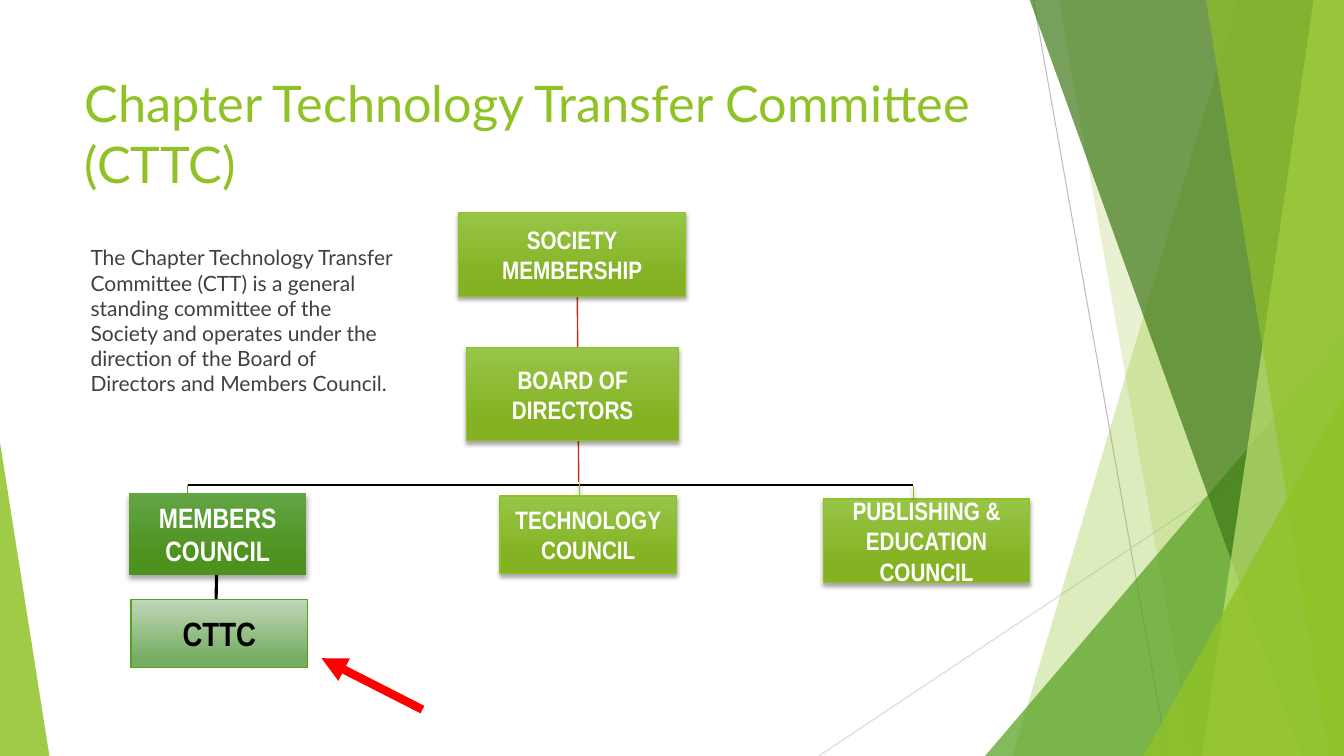
from lxml import etree
from pptx import Presentation
from pptx import util as u
from pptx.dml import color as dc
from pptx.enum import shapes as es, text as et
from pptx.oxml import ns

PX = 9144
WIDE, HIGH = 1333, 750
GREEN, LEAF = "90C226", "54A021"
LIME = ("97C547", "84B223", 0.78)
MOSS = ("63A545", "4D921E", 0.78)
PALE = ("C0D6B9", "76AD61", 0.88)


def px(*vals):
    return [u.Emu(v * PX) for v in vals]


def rgb(code):
    return dc.RGBColor.from_string(code)


def add(node, tag, **attrs):
    return etree.SubElement(node, ns.qn(tag), {k: str(v) for k, v in attrs.items()})


def shade(item, blur, dist):
    props = item._element.spPr
    effect = props.find(ns.qn("a:effectLst"))
    if effect is None:
        effect = add(props, "a:effectLst")
    if blur:
        cast = add(effect, "a:outerShdw", blurRad=u.Pt(blur), dist=u.Pt(dist),
                   dir=5400000, algn="ctr", rotWithShape=0)
        add(add(cast, "a:srgbClr", val="000000"), "a:alpha", val=35000)


def wire(slide, start, end, color, width, blur=0, arrow=False):
    line = slide.shapes.add_connector(es.MSO_CONNECTOR.STRAIGHT, *px(*start, *end))
    line.line.color.rgb = rgb(color)
    line.line.width = u.Pt(width)
    if arrow:
        add(line.line._get_or_add_ln(), "a:tailEnd", type="triangle")
    shade(line, blur, 2)


def tint(shape, color, alpha):
    shape.shadow.inherit = False
    shape.fill.solid()
    shape.fill.fore_color.rgb = rgb(color)
    shape.line.fill.background()
    tone = shape._element.spPr.find(ns.qn("a:solidFill"))[0]
    add(tone, "a:alpha", val=alpha * 1000)


def facet(slide, top, base, color, alpha):
    form = slide.shapes.build_freeform(top, -1, scale=PX)
    form.add_line_segments([(WIDE, -1), (WIDE, HIGH), (base, HIGH)])
    tint(form.convert_to_shape(), color, alpha)


def wedge(slide, place, peak, color, alpha):
    shape = slide.shapes.add_shape(es.MSO_SHAPE.ISOSCELES_TRIANGLE, *px(*place))
    shape.adjustments[0] = peak
    tint(shape, color, alpha)


def style(para, font, size, color, bold=False):
    for run in para.runs:
        run.font.name = font
        run.font.size = u.Pt(size)
        run.font.bold = bold
        run.font.color.rgb = rgb(color)


def box(slide, place, words, size=18, grad=LIME, edge=GREEN,
        ink="FFFFFF", blur=3, dist=2, lead=0):
    shape = slide.shapes.add_shape(es.MSO_SHAPE.RECTANGLE, *px(*place))
    shape.shadow.inherit = False
    shape.fill.gradient()
    shape.fill.gradient_angle = 270
    first, last = shape.fill.gradient_stops
    first.color.rgb, last.color.rgb = rgb(grad[0]), rgb(grad[1])
    first.position, last.position = 0, grad[2]
    if edge:
        shape.line.color.rgb = rgb(edge)
        shape.line.width = u.Pt(1)
    else:
        shape.line.fill.background()
    shade(shape, blur, dist)
    frame = shape.text_frame
    frame.word_wrap = True
    frame.vertical_anchor = et.MSO_ANCHOR.MIDDLE
    frame.margin_left, frame.margin_top, frame.margin_right, frame.margin_bottom = px(1, 1, 1, 1)
    frame.text = words
    frame.paragraphs[0].space_before = u.Pt(lead)
    for para in frame.paragraphs:
        para.alignment = et.PP_ALIGN.CENTER
        style(para, "Arial Narrow", size, ink, True)


def prose(shape, place, words, size, color):
    shape.left, shape.top, shape.width, shape.height = px(*place)
    frame = shape.text_frame
    frame.word_wrap = True
    frame.auto_size = et.MSO_AUTO_SIZE.NONE
    frame.vertical_anchor = et.MSO_ANCHOR.TOP
    frame.text = words
    frame.paragraphs[0].alignment = et.PP_ALIGN.LEFT
    style(frame.paragraphs[0], "Lato", size, color)


def decor(slide):
    wire(slide, (1025, 0), (1158, HIGH), "BFBFBF", 0.75)
    wire(slide, (WIDE, 403), (812, HIGH), "D9D9D9", 0.75)
    facet(slide, 1228, 1004, GREEN, 30)
    facet(slide, 1050, 1183, GREEN, 20)
    wedge(slide, (977, 333, 356, 417), 1, LEAF, 72)
    facet(slide, 1021, 1291, "3F7819", 70)
    facet(slide, 1303, 1192, "C0E474", 70)
    facet(slide, 1196, 1318, GREEN, 65)
    wedge(slide, (1134, 393, 199, 357), 1, GREEN, 80)
    wedge(slide, (0, 439, 49, 311), 0, GREEN, 85)


def chart(slide):
    wire(slide, (186, 481), (906, 481), "000000", 1.5)
    wire(slide, (215, 561), (213, 658), "000000", 2.25)
    wire(slide, (572, 216), (574, 478), "C42F1A", 1)
    box(slide, (130, 595, 175, 67), "CTTC", 24, PALE, LEAF, "000000", 0)
    wire(slide, (575, 479), (575, 495), GREEN, 1, 3)
    wire(slide, (186, 481), (186, 501), LEAF, 1)
    box(slide, (817, 495, 204, 83), "PUBLISHING & EDUCATION\nCOUNCIL")
    box(slide, (128, 489, 176, 81), "MEMBERS\nCOUNCIL", 20, MOSS, None, blur=4, dist=3)
    box(slide, (496, 492, 175, 77), "TECHNOLOGY\nCOUNCIL")
    box(slide, (455, 211, 225, 83), "SOCIETY\nMEMBERSHIP", lead=3)
    box(slide, (463, 345, 210, 92), "BOARD OF DIRECTORS", lead=3)
    wire(slide, (906, 482), (906, 494), GREEN, 1, 3)
    wire(slide, (419, 704), (319, 653), "FF0000", 6, arrow=True)


def main():
    deck = Presentation()
    deck.slide_width, deck.slide_height = px(WIDE, HIGH)
    slide = deck.slides.add_slide(deck.slide_layouts[5])
    decor(slide)
    prose(slide.shapes.title, (74, 67, 940, 144),
          "Chapter Technology Transfer Committee (CTTC)", 36, GREEN)
    chart(slide)
    place = (80, 238, 320, 424)
    prose(slide.shapes.add_textbox(*px(*place)), place,
          "The Chapter Technology Transfer Committee (CTT) is a general standing "
          "committee of the Society and operates under the direction of the Board "
          "of Directors and Members Council.", 15, "404040")
    deck.save("out.pptx")


if __name__ == "__main__":
    main()
